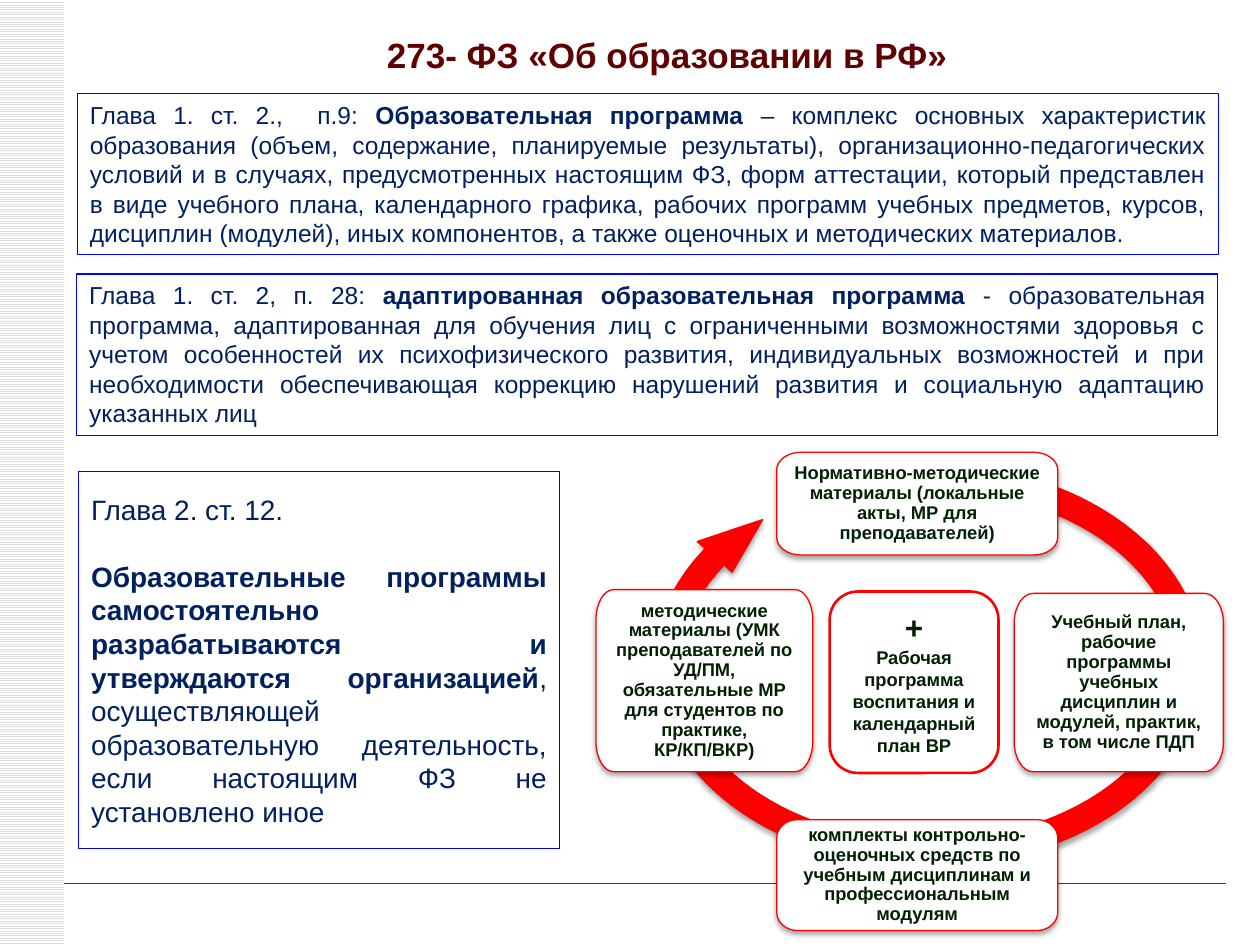
from dataclasses import dataclass

from lxml import etree
from pptx import Presentation, util as u
from pptx.dml.color import RGBColor
from pptx.enum import dml, shapes, text
from pptx.oxml import parse_xml
from pptx.oxml.ns import qn

COLS, ROWS = 100, 75
CELL = u.Inches(0.1)
CURVE = 0.55  # reach of a quarter ellipse's control points towards its corner
COLORS = {
    "maroon": "600000", "navy": "002060", "green": "002200", "blue": "0000FF",
    "red": "FF0000", "white": "FFFFFF", "stripe": "DDDDDD", "rule": "1A3D97",
}
A_NS = "http://schemas.openxmlformats.org/drawingml/2006/main"
SHADOW_XML = (
    f'<a:effectLst xmlns:a="{A_NS}">'
    '<a:outerShdw blurRad="39370" dist="22860" dir="5400000" rotWithShape="0">'
    '<a:srgbClr val="000000"><a:alpha val="35000"/></a:srgbClr>'
    '</a:outerShdw></a:effectLst>'
)


@dataclass(frozen=True)
class Area:
    """A place on the slide, in grid columns and rows."""
    col: float
    row: float
    width: float
    height: float

    def emu(self) -> list[int]:
        return [grid(v) for v in (self.col, self.row, self.width, self.height)]


@dataclass(frozen=True)
class Run:
    wording: str
    size: float
    color: str
    bold: bool = False


@dataclass(frozen=True)
class Quote:
    """A framed excerpt of the law; each paragraph is a tuple of runs."""
    area: Area
    paragraphs: tuple
    anchor: text.MSO_ANCHOR = text.MSO_ANCHOR.MIDDLE


@dataclass(frozen=True)
class Card:
    """A stage of the cycle, with elliptical corners."""
    area: Area
    corner: tuple[float, float]
    inset: float
    wording: str


def law(wording: str, bold: bool = False, size: float = 14) -> Run:
    return Run(wording, size, "navy", bold)


PROGRAM = Quote(Area(6.15, 7.4, 90.55, 12.8), ((
    law("Глава 1. ст. 2.,  п.9: "),
    law("Образовательная программа ", True),
    law("– комплекс основных характеристик образования (объем, содержание, "
        "планируемые результаты), организационно-педагогических условий и в случаях, "
        "предусмотренных настоящим ФЗ, форм аттестации, который представлен в виде "
        "учебного плана, календарного графика, рабочих программ учебных предметов, "
        "курсов, дисциплин (модулей), иных компонентов, а также оценочных и "
        "методических материалов.")),))
ADAPTED = Quote(Area(6.1, 21.75, 90.55, 12.8), ((
    law("Глава 1. ст. 2, п. 28: "),
    law("адаптированная образовательная программа ", True),
    law("- образовательная программа, адаптированная для обучения лиц с ограниченными "
        "возможностями здоровья с учетом особенностей их психофизического развития, "
        "индивидуальных возможностей и при необходимости обеспечивающая коррекцию "
        "нарушений развития и социальную адаптацию указанных лиц")),),
    text.MSO_ANCHOR.TOP)
AUTONOMY = Quote(Area(6.25, 37.45, 38.15, 29.9), (
    (law("Глава 2. ст. 12. ", size=16),),
    (law("Образовательные программы самостоятельно разрабатываются и утверждаются "
         "организацией", True, 16),
     law(", осуществляющей образовательную деятельность, если настоящим ФЗ не "
         "установлено иное", size=16))))
CARDS = [
    Card(Area(61.65, 65.05, 22.3, 8.8), (1.65, 1.45), 1.5,
         "комплекты контрольно-оценочных средств по учебным дисциплинам и "
         "профессиональным модулям"),
    Card(Area(80.5, 47.1, 16.6, 14.15), (1.5, 2.35), 1.6,
         "Учебный план, рабочие программы учебных дисциплин и модулей, практик, "
         "в том числе ПДП"),
    Card(Area(47.3, 46.8, 17.2, 14.45), (1.4, 2.4), 1.5,
         "методические материалы (УМК преподавателей по УД/ПМ, обязательные МР для "
         "студентов по практике, КР/КП/ВКР)"),
    Card(Area(61.65, 35.9, 22.3, 8.15), (1.9, 1.4), 1.4,
         "Нормативно-методические материалы (локальные акты, МР для преподавателей)"),
]


def grid(cells: float) -> int:
    return round(cells * CELL)


def rgb(name: str) -> RGBColor:
    return RGBColor.from_string(COLORS[name])


def paint(shape, fill: str | None, line: str, weight: float = 0.75, shaded: bool = False) -> None:
    if fill:
        shape.fill.solid()
        shape.fill.fore_color.rgb = rgb(fill)
    else:
        shape.fill.background()
    shape.line.color.rgb = rgb(line)
    shape.line.width = u.Pt(weight)
    if shaded:
        shape.element.spPr.append(parse_xml(SHADOW_XML))
    else:
        shape.shadow.inherit = False


def write(shape, paragraphs, align, anchor=text.MSO_ANCHOR.MIDDLE,
          gap: float = 0, spacing: float = 1.0, inset: float | None = None) -> None:
    frame = shape.text_frame
    frame.word_wrap = True
    frame.vertical_anchor = anchor
    if inset is not None:
        frame.margin_left = frame.margin_right = grid(inset)
        frame.margin_top = frame.margin_bottom = grid(inset)
    for index, runs in enumerate(paragraphs):
        paragraph = frame.add_paragraph() if index else frame.paragraphs[0]
        paragraph.alignment = align
        paragraph.line_spacing = spacing
        if index:
            paragraph.space_before = u.Pt(gap)
        for part in runs:
            run = paragraph.add_run()
            run.text = part.wording
            run.font.name = "Arial"
            run.font.size = u.Pt(part.size)
            run.font.bold = part.bold
            run.font.color.rgb = rgb(part.color)


def draw_backdrop(slide) -> None:
    stripe = slide.shapes.add_shape(
        shapes.MSO_SHAPE.RECTANGLE, *Area(0, 0, 5.1, ROWS).emu())
    stripe.fill.patterned()
    stripe.fill.pattern = dml.MSO_PATTERN.LIGHT_HORIZONTAL
    stripe.fill.fore_color.rgb = rgb("stripe")
    stripe.fill.back_color.rgb = rgb("white")
    stripe.line.fill.background()
    stripe.shadow.inherit = False
    rule = slide.shapes.add_connector(
        shapes.MSO_CONNECTOR.STRAIGHT, grid(5.1), grid(70.1), grid(97.3), grid(70.1))
    rule.line.color.rgb = rgb("rule")
    rule.line.width = u.Emu(1)  # a hairline
    etree.SubElement(rule.element.spPr, qn("a:effectLst"))


def draw_quote(slide, quote: Quote) -> None:
    frame = slide.shapes.add_shape(shapes.MSO_SHAPE.RECTANGLE, *quote.area.emu())
    paint(frame, None, "blue")
    write(frame, quote.paragraphs, text.PP_ALIGN.JUSTIFY, quote.anchor, gap=19)


def draw_cycle_arrow(slide) -> None:
    arrow = slide.shapes.add_shape(
        shapes.MSO_SHAPE.CIRCULAR_ARROW, *Area(51.1, 36, 45.2, 33.6).emu())
    for index, percent in enumerate((6, 864.9, 12411.3, 16707, 5.5)):
        arrow.adjustments[index] = percent / 100
    paint(arrow, "red", "red", shaded=True)


def round_corners(shape) -> None:
    """Turn every other segment of an eight-point outline into a quarter ellipse."""
    points = list(shape.element.spPr.iter(qn("a:pt")))
    spots = [(int(p.get("x")), int(p.get("y"))) for p in points]
    for end in range(1, 8, 2):
        (x0, y0), (x1, y1) = spots[end - 1], spots[end]
        corner_x, corner_y = (x0, y1) if end % 4 == 1 else (x1, y0)
        segment = points[end].getparent()
        segment.tag = qn("a:cubicBezTo")
        for place, (x, y) in enumerate(((x0, y0), (x1, y1))):
            control = etree.Element(qn("a:pt"))
            control.set("x", str(round(x + CURVE * (corner_x - x))))
            control.set("y", str(round(y + CURVE * (corner_y - y))))
            segment.insert(place, control)


def draw_card(slide, card: Card) -> None:
    left, top, width, height = card.area.emu()
    rx, ry = map(grid, card.corner)
    right, bottom = left + width, top + height
    builder = slide.shapes.build_freeform(left, top + ry)
    builder.add_line_segments((
        (left + rx, top), (right - rx, top), (right, top + ry), (right, bottom - ry),
        (right - rx, bottom), (left + rx, bottom), (left, bottom - ry)), close=True)
    shape = builder.convert_to_shape()
    round_corners(shape)
    paint(shape, "white", "red", shaded=True)
    write(shape, ((Run(card.wording, 10.5, "green", True),),), text.PP_ALIGN.CENTER,
          spacing=0.9, inset=card.inset)


def draw_centre(slide) -> None:
    centre = slide.shapes.add_shape(
        shapes.MSO_SHAPE.ROUNDED_RECTANGLE, *Area(65.85, 46.95, 13.4, 14.4).emu())
    paint(centre, "white", "red", 1.5)
    write(centre, (
        (Run("+", 18, "green", True),),
        (Run("Рабочая программа воспитания и календарный план ВР", 10.5, "green", True),),
    ), text.PP_ALIGN.CENTER)


def main() -> None:
    deck = Presentation()
    deck.slide_width, deck.slide_height = grid(COLS), grid(ROWS)
    slide = deck.slides.add_slide(deck.slide_layouts[6])
    draw_backdrop(slide)
    title = slide.shapes.add_textbox(*Area(13.8, 1.25, 78.3, 6.2).emu())
    write(title, ((Run("273- ФЗ «Об образовании в РФ»", 20, "maroon", True),),),
          text.PP_ALIGN.CENTER)
    draw_quote(slide, PROGRAM)
    draw_cycle_arrow(slide)
    for card in CARDS:
        draw_card(slide, card)
    draw_quote(slide, AUTONOMY)
    draw_centre(slide)
    draw_quote(slide, ADAPTED)
    deck.save("out.pptx")


if __name__ == "__main__":
    main()
